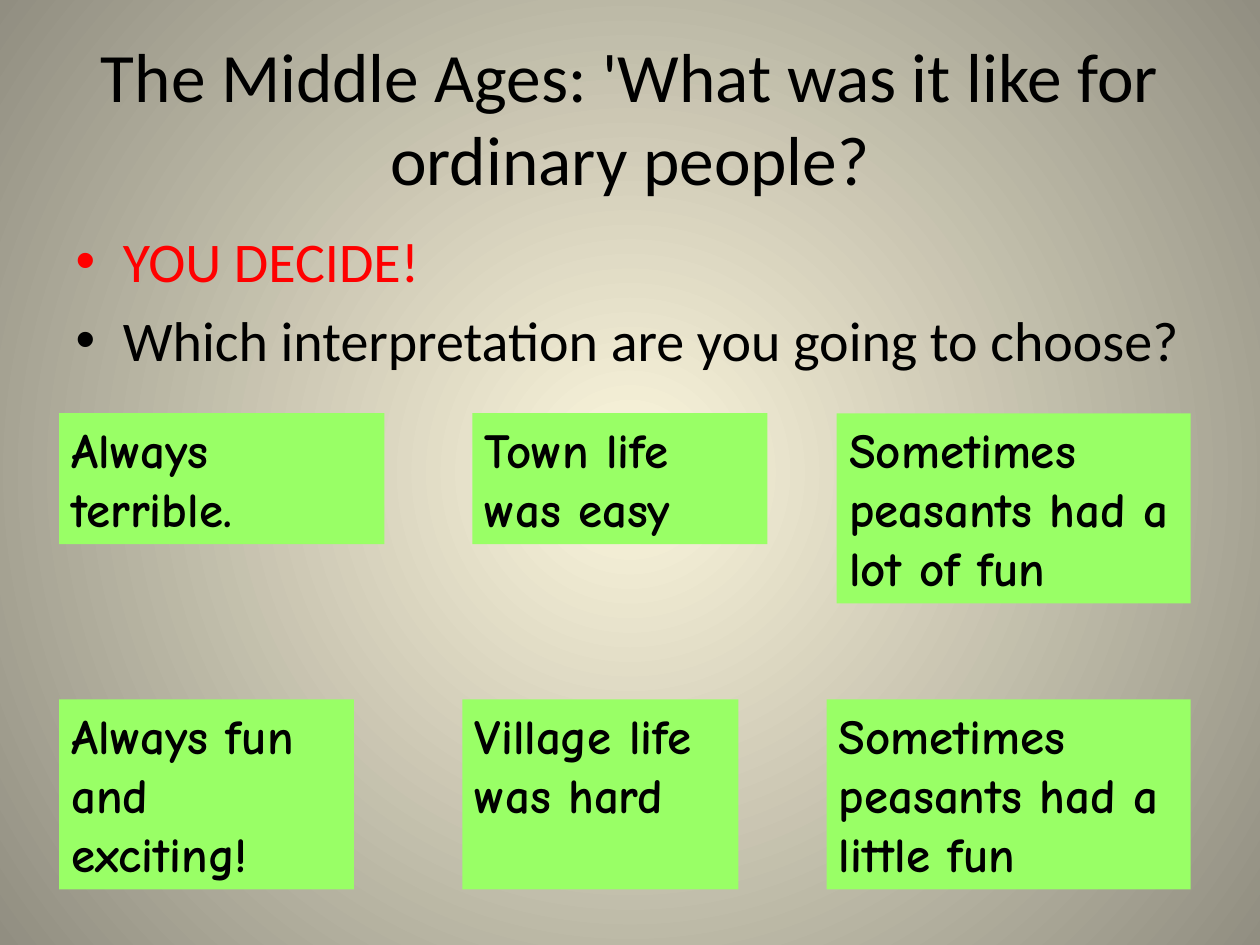
from lxml import etree
from pptx import Presentation, util as u
from pptx.dml.color import RGBColor
from pptx.enum import text
from pptx.oxml import ns

COLORS = {"glow": "FCF7DD", "edge": "918E81", "ink": "000000",
          "alert": "FF0000", "card": "99FF66"}
COLS, ROWS = 100, 75


class Deck:
    """Holds the style and current slide; places elements on a COLS x ROWS grid."""
    heading_font, card_font = "Calibri", "Comic Neue"

    def __init__(self):
        self.prs = Presentation()
        self.prs.slide_width, self.prs.slide_height = u.Inches(10), u.Inches(7.5)
        self.s = self.prs.slides.add_slide(self.prs.slide_layouts[1])

    def box(self, col, row, cols, rows):
        dx, dy = self.prs.slide_width / COLS, self.prs.slide_height / ROWS
        return [round(v) for v in (col * dx, row * dy, cols * dx, rows * dy)]

    def color(self, name):
        return RGBColor.from_string(COLORS[name])

    def background(self, inner, outer):
        """Circular gradient from the slide's centre to its corners."""
        fill = self.s.background.fill
        fill.gradient()
        for stop, name, position in zip(fill.gradient_stops, (inner, outer), (0, 1)):
            stop.color.rgb = self.color(name)
            stop.position = position
        grad = self.s._element.find(".//" + ns.qn("a:gradFill"))
        lin = grad.find(ns.qn("a:lin"))
        circle = etree.Element(ns.qn("a:path"), path="circle")
        etree.SubElement(circle, ns.qn("a:fillToRect"),
                         l="50000", t="50000", r="50000", b="50000")
        grad.replace(lin, circle)

    def run(self, p, words, size, font, color="ink", bold=False):
        r = p.add_run()
        r.text = words
        r.font.size, r.font.name, r.font.bold = u.Pt(size), font, bold
        r.font.color.rgb = self.color(color)

    def place(self, sp, *area):
        sp.left, sp.top, sp.width, sp.height = self.box(*area)
        sp.text_frame.auto_size = text.MSO_AUTO_SIZE.NONE
        return sp.text_frame

    def title(self, words, *area):
        tf = self.place(self.s.shapes.title, *area)
        tf.vertical_anchor = text.MSO_ANCHOR.MIDDLE
        p = tf.paragraphs[0]
        p.alignment = text.PP_ALIGN.CENTER
        self.run(p, words, 39.6, self.heading_font)

    def bullets(self, items, *area):
        tf = self.place(self.s.placeholders[1], *area)
        for i, (words, color) in enumerate(items):
            p = tf.add_paragraph() if i else tf.paragraphs[0]
            self.run(p, words, 32, self.heading_font, color)

    def card(self, words, *area):
        sp = self.s.shapes.add_textbox(*self.box(*area))
        sp.fill.solid()
        sp.fill.fore_color.rgb = self.color("card")
        tf = sp.text_frame
        tf.word_wrap = True
        self.run(tf.paragraphs[0], words, 28, self.card_font, bold=True)


def main():
    deck = Deck()
    deck.background("glow", "edge")
    deck.title("The Middle Ages: 'What was it like for ordinary people?", 5, 3, 90, 12.5)
    deck.bullets([("YOU DECIDE!", "alert"),
                  ("Which interpretation are you going to choose?", "ink")],
                 5, 17.5, 90, 14.5)

    two_lines, three_lines = 10.4, 15.1
    card_rows = {
        32.8: [("Always terrible.", 4.7, 25.8, two_lines),
               ("Town life was easy", 37.5, 23.4, two_lines),
               ("Sometimes peasants had a lot of fun", 66.4, 28.1, three_lines)],
        55.5: [("Always fun and exciting!", 4.7, 23.4, three_lines),
               ("Village life was hard", 36.7, 21.9, three_lines),
               ("Sometimes peasants had a little fun", 65.6, 28.9, three_lines)],
    }
    for row, cards in card_rows.items():
        for words, col, cols, rows in cards:
            deck.card(words, col, row, cols, rows)

    deck.prs.save("out.pptx")


if __name__ == "__main__":
    main()
